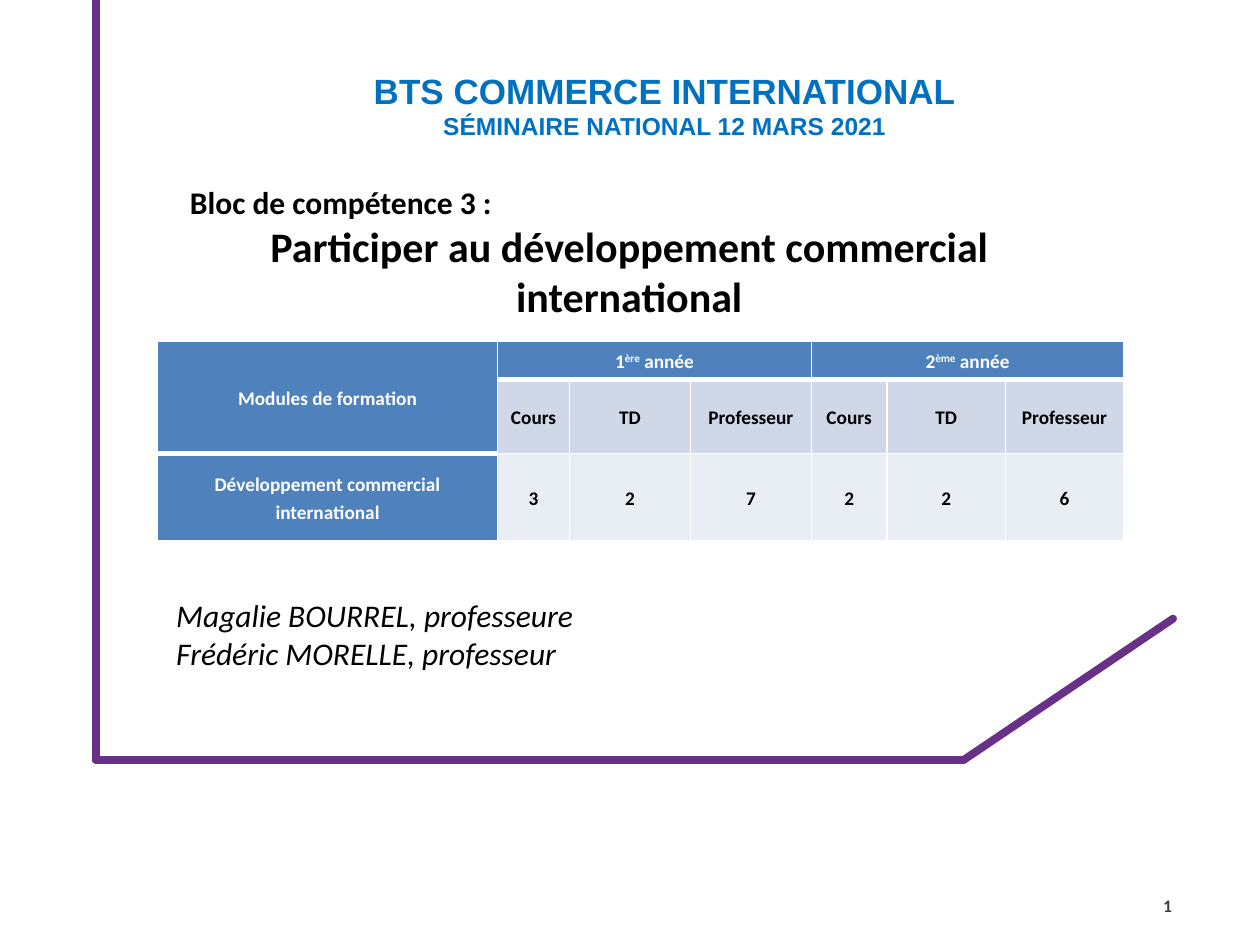
"""Build the opening slide of an international trade seminar."""
import dataclasses
import itertools

import lxml.etree
import pptx
import pptx.dml.color
import pptx.enum.shapes
import pptx.enum.text
import pptx.oxml.ns
import pptx.util

Inches = pptx.util.Inches
Pt = pptx.util.Pt
Align = pptx.enum.text.PP_ALIGN
Anchor = pptx.enum.text.MSO_ANCHOR
qn = pptx.oxml.ns.qn


def tint(code):
    return pptx.dml.color.RGBColor.from_string(code)


@dataclasses.dataclass(frozen=True)
class Theme:
    frame: str = "683086"
    title: str = "0070C0"
    ink: str = "000000"
    page: str = "404040"
    white: str = "FFFFFF"
    head: str = "4F81BD"
    band: str = "D0D8E8"
    pale: str = "E9EDF4"
    sans: str = "Arial"
    body: str = "Calibri"
    big: int = 24
    large: int = 20
    mid: int = 18
    small: int = 14
    grid: int = 11
    tiny: int = 10


class Deck:
    def __init__(self, theme):
        self.theme = theme
        self.show = pptx.Presentation()
        self.show.slide_width, self.show.slide_height = Inches(10), Inches(7.5)
        self.slide = self.show.slides.add_slide(self.show.slide_layouts[6])

    def style(self, par, size, color, align=Align.LEFT, face=None, bold=True, slant=False):
        par.alignment = align
        for run in par.runs:
            font = run.font
            font.name, font.size = face or self.theme.body, Pt(size)
            font.bold, font.italic = bold, slant
            font.color.rgb = tint(color)

    def line(self, start, end):
        kind = pptx.enum.shapes.MSO_CONNECTOR.STRAIGHT
        link = self.slide.shapes.add_connector(kind, *map(Inches, start + end))
        link.line.color.rgb = tint(self.theme.frame)
        link.line.width = Pt(4.5)
        link.line._ln.set("cap", "rnd")
        lxml.etree.SubElement(link._element.spPr, qn("a:effectLst"))

    def text(self, box, lines, anchor=Anchor.TOP, grow=True):
        frame = self.slide.shapes.add_textbox(*map(Inches, box)).text_frame
        frame.word_wrap = True
        frame.vertical_anchor = anchor
        if grow:
            frame.auto_size = pptx.enum.text.MSO_AUTO_SIZE.SHAPE_TO_FIT_TEXT
        frame.text = "\n".join(words for words, _ in lines)
        for par, (_, look) in zip(frame.paragraphs, lines):
            self.style(par, **look)

    def edge(self, cell, top, base):
        props = cell._tc.get_or_add_tcPr()
        sides = {"lnL": 1, "lnR": 1, "lnT": top, "lnB": base}
        for place, (side, width) in enumerate(sides.items()):
            rule = lxml.etree.Element(qn("a:" + side), w=str(Pt(width)))
            fill = lxml.etree.SubElement(rule, qn("a:solidFill"))
            lxml.etree.SubElement(fill, qn("a:srgbClr"), val=self.theme.white)
            props.insert(place, rule)

    def cell(self, cell, words, fill, color):
        cell.fill.solid()
        cell.fill.fore_color.rgb = tint(fill)
        cell.vertical_anchor = Anchor.MIDDLE
        cell.margin_left = cell.margin_right = Inches(0.05)
        cell.margin_top = cell.margin_bottom = 0
        par = cell.text_frame.paragraphs[0]
        first, *rest = words.split("^")
        par.text = first
        for place, piece in enumerate(rest):
            run = par.add_run()
            run.text = piece
            if place % 2 == 0:
                run._r.get_or_add_rPr().set("baseline", "30000")
        par.line_spacing, par.space_after = 1.15, Pt(10)
        self.style(par, self.theme.grid, color, Align.CENTER)

    def table(self, box, cols, rows, data, spans):
        theme = self.theme
        shape = self.slide.shapes.add_table(len(rows), len(cols), *map(Inches, box))
        grid = shape.table
        for part, size in zip(grid.columns, cols):
            part.width = Inches(size)
        for part, size in zip(grid.rows, rows):
            part.height = Inches(size)
        for first, last in spans:
            grid.cell(*first).merge(grid.cell(*last))
        for row, col in itertools.product(range(len(rows)), range(len(cols))):
            cell = grid.cell(row, col)
            head = row == 0 or col == 0
            fill = theme.head if head else (theme.band, theme.pale)[row - 1]
            self.cell(cell, data[row][col], fill, theme.white if head else theme.ink)
            brink = 1 if col == 0 else 0
            self.edge(cell, 3 if row == brink + 1 else 1, 3 if row in (0, brink) else 1)


def main():
    theme = Theme()
    deck = Deck(theme)
    points = [(0.76, 0), (0.76, 6.03), (7.65, 6.03), (9.31, 4.91)]
    for start, end in itertools.pairwise(points):
        deck.line(start, end)

    title = dict(color=theme.title, align=Align.CENTER, face=theme.sans)
    deck.text((2.57, 0.5, 5.41, 0.67), [
        ("BTS COMMERCE INTERNATIONAL", dict(title, size=theme.large)),
        ("SÉMINAIRE NATIONAL 12 MARS 2021", dict(title, size=theme.small)),
    ])
    page = dict(size=theme.tiny, color=theme.page, align=Align.RIGHT)
    deck.text((8.96, 6.99, 0.44, 0.4), [("1", page)], Anchor.MIDDLE, False)
    deck.text((1.41, 1.4, 7.17, 1.21), [
        ("Bloc de compétence 3 :", dict(size=theme.mid, color=theme.ink)),
        ("Participer au développement commercial international",
         dict(size=theme.big, color=theme.ink, align=Align.CENTER)),
    ])
    deck.table(
        (1.25, 2.71, 7.68, 1.57),
        [2.7, 0.57, 0.96, 0.96, 0.6, 0.94, 0.94],
        [0.3, 0.59, 0.69],
        [
            ["Modules de formation", "1^ère^ année", "", "", "2^ème^ année", "", ""],
            [""] + ["Cours", "TD", "Professeur"] * 2,
            ["Développement commercial international", *"327226"],
        ],
        [((0, 0), (1, 0)), ((0, 1), (0, 3)), ((0, 4), (0, 6))],
    )
    name = dict(size=theme.mid, color=theme.ink, bold=False, slant=True)
    deck.text((1.3, 4.68, 4.12, 0.71), [
        ("Magalie BOURREL, professeure", name),
        ("Frédéric MORELLE, professeur", name),
    ])
    deck.show.save("out.pptx")


if __name__ == "__main__":
    main()
